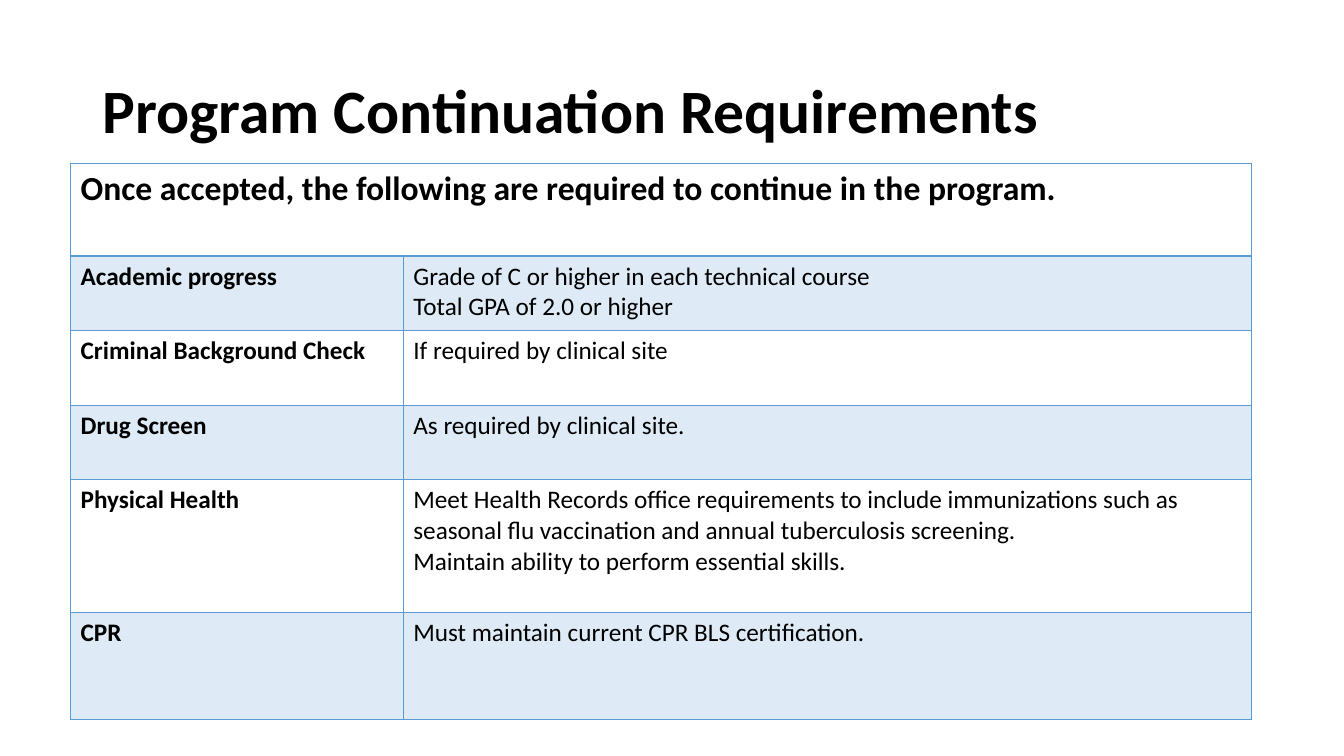
from pptx import Presentation
from pptx.dml.color import RGBColor
from pptx.enum.text import MSO_ANCHOR
from pptx.oxml import parse_xml
from pptx.oxml.ns import nsdecls
from pptx.util import Inches, Pt

BLUE, PALE_BLUE, BLACK = "5B9BD5", "DEEBF7", "000000"


def style_text(frame, size, bold):
    for paragraph in frame.paragraphs:
        for run in paragraph.runs:
            run.font.name = "Calibri"
            run.font.size = Pt(size)
            run.font.bold = bold
            run.font.color.rgb = RGBColor.from_string(BLACK)


def add_borders(cell, bottom=1):
    """Draw blue cell borders; they must come before any fill is set."""
    properties = cell._tc.get_or_add_tcPr()
    for side, width in (("L", 1), ("R", 1), ("T", 1), ("B", bottom)):
        properties.append(parse_xml(
            f'<a:ln{side} {nsdecls("a")} w="{Pt(width)}"><a:solidFill>'
            f'<a:srgbClr val="{BLUE}"/></a:solidFill></a:ln{side}>'))


prs = Presentation()
prs.slide_width, prs.slide_height = Inches(13.33), Inches(7.5)
slide = prs.slides.add_slide(prs.slide_layouts[6])

title = slide.shapes.add_textbox(
    Inches(0.92), Inches(0.4), Inches(11.5), Inches(1.45)).text_frame
title.word_wrap = True
title.vertical_anchor = MSO_ANCHOR.MIDDLE
title.text = "Program Continuation Requirements"
title.paragraphs[0].line_spacing = 0.9
style_text(title, 44, True)

intro = "Once accepted, the following are required to continue in the program."
requirements = [
    ("Academic progress",
     "Grade of C or higher in each technical course\nTotal GPA of 2.0 or higher"),
    ("Criminal Background Check", "If required by clinical site"),
    ("Drug Screen", "As required by clinical site."),
    ("Physical Health",
     "Meet Health Records office requirements to include immunizations such as "
     "seasonal flu vaccination and annual tuberculosis screening.\n"
     "Maintain ability to perform essential skills."),
    ("CPR", "Must maintain current CPR BLS certification."),
]
row_heights = [0.92, 0.74, 0.74, 0.74, 1.32, 1.06]

table = slide.shapes.add_table(
    len(row_heights), 2, Inches(0.7), Inches(1.62),
    Inches(11.71), Inches(sum(row_heights))).table
table.columns[0].width, table.columns[1].width = Inches(3.3), Inches(8.41)
for row, height in zip(table.rows, row_heights):
    row.height = Inches(height)

table.cell(0, 0).merge(table.cell(0, 1))
for r, texts in enumerate([(intro, "")] + requirements):
    for c, text in enumerate(texts):
        cell = table.cell(r, c)
        add_borders(cell, bottom=2 if r == 0 else 1)
        if r % 2:
            cell.fill.solid()
            cell.fill.fore_color.rgb = RGBColor.from_string(PALE_BLUE)
        else:
            cell.fill.background()
        cell.text_frame.text = text
        style_text(cell.text_frame, 24 if r == 0 else 18, c == 0)

prs.save("out.pptx")
